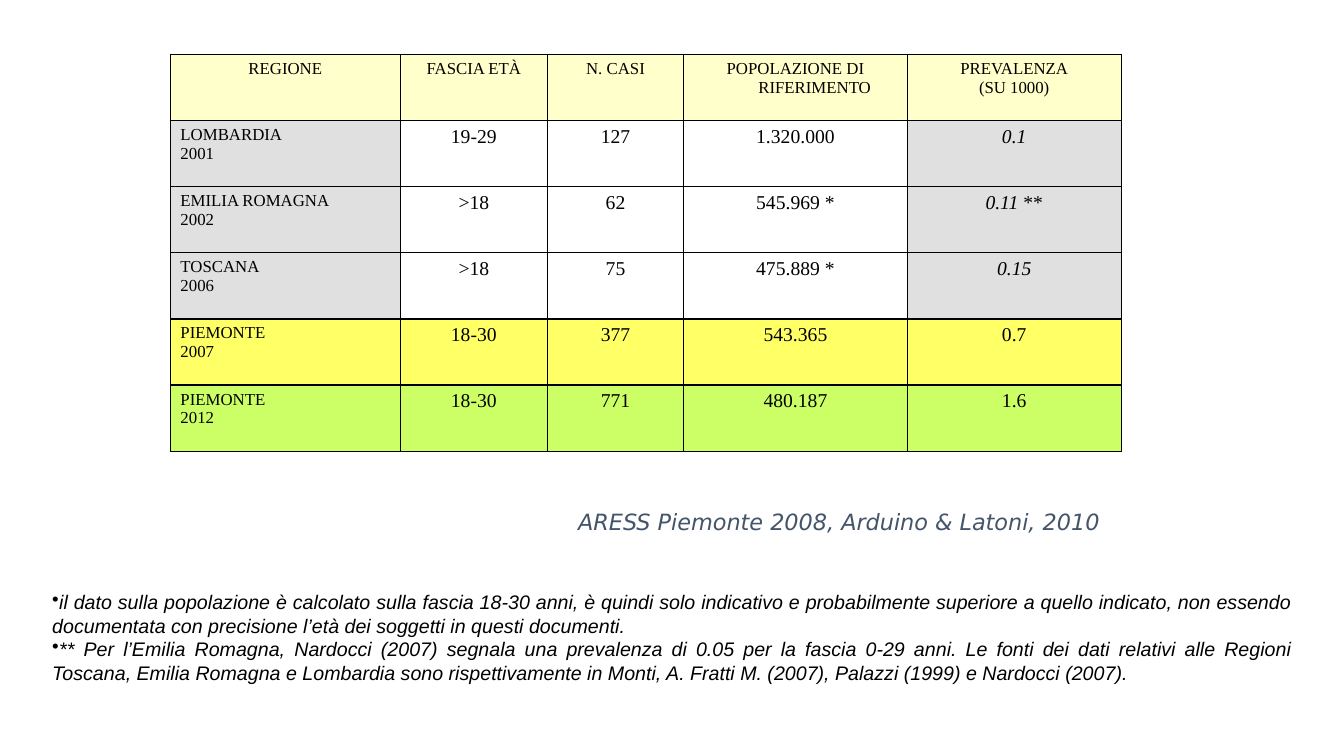
from dataclasses import dataclass

from lxml.etree import SubElement
from pptx import Presentation
from pptx.dml.color import RGBColor
from pptx.enum.text import MSO_ANCHOR as Anchor, MSO_AUTO_SIZE as AutoSize, PP_ALIGN as Align
from pptx.oxml.ns import qn
from pptx.util import Inches, Pt

COLORS = {
    "text": "000000",
    "border": "000000",
    "source": "44546A",
    "header": "FFFFCC",
    "gray": "E0E0E0",
    "yellow": "FFFF66",
    "green": "CCFF66",
}
TABLE_FONT = "Times New Roman"
HEADERS = ["REGIONE", "FASCIA ETÀ", "N. CASI", "POPOLAZIONE DI RIFERIMENTO", "PREVALENZA\n(SU 1000)"]
COLUMN_WIDTHS = [2.28, 1.46, 1.35, 2.22, 2.12]
ROW_HEIGHT = 0.656
NOTES = [
    "il dato sulla popolazione è calcolato sulla fascia 18-30 anni, è quindi solo indicativo e "
    "probabilmente superiore a quello indicato, non essendo documentata con precisione l’età dei "
    "soggetti in questi documenti.",
    "** Per l’Emilia Romagna, Nardocci (2007) segnala una prevalenza di 0.05 per la fascia 0-29 anni. "
    "Le fonti dei dati relativi alle Regioni Toscana, Emilia Romagna e Lombardia sono rispettivamente "
    "in Monti, A. Fratti M. (2007), Palazzi (1999) e Nardocci (2007).",
]


@dataclass
class Survey:
    region: str
    year: int
    ages: str
    cases: int
    population: str
    prevalence: str
    mark: str = ""
    highlight: str | None = None


SURVEYS = [
    Survey("LOMBARDIA", 2001, "19-29", 127, "1.320.000", "0.1"),
    Survey("EMILIA ROMAGNA", 2002, ">18", 62, "545.969 *", "0.11", mark=" **"),
    Survey("TOSCANA", 2006, ">18", 75, "475.889 *", "0.15"),
    Survey("PIEMONTE", 2007, "18-30", 377, "543.365", "0.7", highlight="yellow"),
    Survey("PIEMONTE", 2012, "18-30", 771, "480.187", "1.6", highlight="green"),
]


def add_run(paragraph, text: str, *, size: float, font: str, color: str = "text", italic: bool = False) -> None:
    run = paragraph.add_run()
    run.text = text
    run.font.size = Pt(size)
    run.font.name = font
    run.font.italic = italic
    run.font.color.rgb = RGBColor.from_string(COLORS[color])


def write(frame, text: str, *, align: Align, hanging: float = 0, bullet: str = "", **style) -> None:
    for index, line in enumerate(text.split("\n")):
        paragraph = frame.add_paragraph() if index else frame.paragraphs[0]
        paragraph.alignment = align
        properties = paragraph._p.get_or_add_pPr()
        properties.set("marL", str(Inches(hanging)))
        properties.set("indent", str(-Inches(hanging)))
        if bullet:
            SubElement(properties, qn("a:buChar"), char=bullet)
        add_run(paragraph, line, **style)


def format_cell(cell, fill: str | None) -> None:
    properties = cell._tc.get_or_add_tcPr()
    for side in ("L", "R", "T", "B"):
        border = SubElement(properties, qn(f"a:ln{side}"), w=str(Pt(1)))
        SubElement(SubElement(border, qn("a:solidFill")), qn("a:srgbClr"), val=COLORS["border"])
    if fill:
        cell.fill.solid()
        cell.fill.fore_color.rgb = RGBColor.from_string(COLORS[fill])
    else:
        cell.fill.background()


def fill_cell(cell, text: str, fill: str | None, *, size: float = 14,
              align: Align = Align.CENTER, italic: bool = False) -> None:
    format_cell(cell, fill)
    write(cell.text_frame, text, align=align, hanging=0.38, size=size, font=TABLE_FONT, italic=italic)


def add_survey_table(slide) -> None:
    row_count = len(SURVEYS) + 1
    table = slide.shapes.add_table(
        row_count, len(HEADERS), Inches(1.69), Inches(0.54),
        Inches(sum(COLUMN_WIDTHS)), Inches(ROW_HEIGHT * row_count),
    ).table
    table.first_row = False
    table.horz_banding = False
    for column, width in zip(table.columns, COLUMN_WIDTHS):
        column.width = Inches(width)
    for row in table.rows:
        row.height = Inches(ROW_HEIGHT)
    for column_index, header in enumerate(HEADERS):
        fill_cell(table.cell(0, column_index), header, "header", size=12)
    for row_index, survey in enumerate(SURVEYS, start=1):
        edge_fill = survey.highlight or "gray"
        region, *middle, prevalence = [table.cell(row_index, index) for index in range(len(HEADERS))]
        fill_cell(region, f"{survey.region}\n{survey.year}", edge_fill, size=12, align=Align.JUSTIFY)
        for cell, value in zip(middle, (survey.ages, survey.cases, survey.population)):
            fill_cell(cell, str(value), survey.highlight)
        fill_cell(prevalence, survey.prevalence, edge_fill, italic=not survey.highlight)
        if survey.mark:
            add_run(prevalence.text_frame.paragraphs[0], survey.mark, size=14, font=TABLE_FONT)


def add_text(slide, text: str, left: float, top: float, width: float, height: float, *,
             wrap: bool = True, anchor: Anchor = Anchor.TOP, **style) -> None:
    frame = slide.shapes.add_textbox(Inches(left), Inches(top), Inches(width), Inches(height)).text_frame
    frame.word_wrap = wrap
    frame.auto_size = AutoSize.SHAPE_TO_FIT_TEXT
    frame.vertical_anchor = anchor
    write(frame, text, **style)


def main() -> None:
    presentation = Presentation()
    presentation.slide_width = Inches(13.33)
    presentation.slide_height = Inches(7.5)
    slide = presentation.slides.add_slide(presentation.slide_layouts[6])
    add_survey_table(slide)
    add_text(slide, "\n".join(NOTES), 0.42, 5.8, 12.5, 1.04, anchor=Anchor.MIDDLE,
             align=Align.JUSTIFY, bullet="•", size=14, font="Arial", italic=True)
    add_text(slide, "ARESS Piemonte 2008, Arduino & Latoni, 2010", 5.51, 4.99, 5.5, 0.37, wrap=False,
             align=Align.RIGHT, size=16, font="DejaVu Sans", color="source", italic=True)
    presentation.save("out.pptx")


if __name__ == "__main__":
    main()
